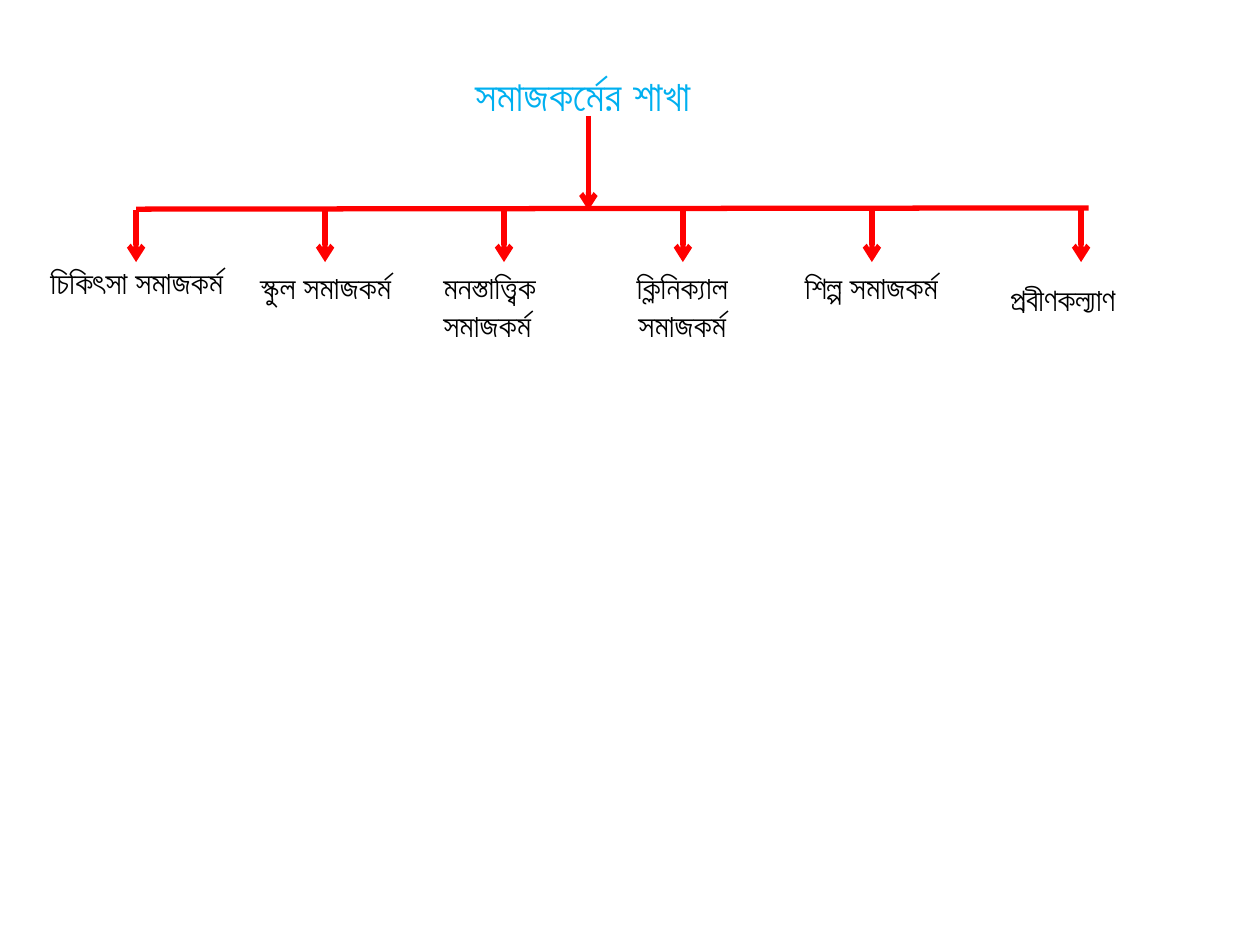
from lxml import etree
from pptx import Presentation
from pptx.dml.color import RGBColor
from pptx.enum.shapes import MSO_CONNECTOR
from pptx.enum.text import MSO_AUTO_SIZE, PP_ALIGN
from pptx.oxml.ns import qn
from pptx.util import Inches, Pt

STRAIGHT = MSO_CONNECTOR.STRAIGHT
GROW = MSO_AUTO_SIZE.SHAPE_TO_FIT_TEXT
LEFT = PP_ALIGN.LEFT
CENTER = PP_ALIGN.CENTER

RED = "FF0000"
BAR_Y = 1.67
ARROW_END = 2.08
ARROW_XS = [1.08, 2.58, 4, 5.42, 6.92, 8.58]
BRANCHES = [
    ("চিকিৎসা সমাজকর্ম", 0.2, 2.04, 1.77, 0.71, CENTER),
    ("স্কুল সমাজকর্ম", 1.92, 2.08, 1.33, 0.71, CENTER),
    ("মনস্তাত্ত্বিক সমাজকর্ম", 3.42, 2.08, 1.33, 0.71, LEFT),
    ("ক্লিনিক্যাল সমাজকর্ম", 4.75, 2.08, 1.33, 0.71, CENTER),
    ("শিল্প সমাজকর্ম", 6.25, 2.08, 1.33, 0.71, CENTER),
    ("প্রবীণকল্যাণ", 7.92, 2.17, 1.33, 0.4, LEFT),
]


def rgb(value):
    return RGBColor.from_string(value)


def add_text(s, text, x, y, w, h, size=18, color="000000", bold=False, align=CENTER):
    tf = s.shapes.add_textbox(Inches(x), Inches(y), Inches(w), Inches(h)).text_frame
    tf.word_wrap = True
    tf.auto_size = GROW
    p = tf.paragraphs[0]
    p.alignment = align
    r = p.add_run()
    r.text = text
    r.font.name = "Calibri"
    r.font.size = Pt(size)
    r.font.bold = bold
    r.font.color.rgb = rgb(color)


def add_line(s, x1, y1, x2, y2, arrow=False):
    line = s.shapes.add_connector(STRAIGHT, Inches(x1), Inches(y1), Inches(x2), Inches(y2))
    line.line.color.rgb = rgb(RED)
    line.line.width = Pt(3)
    if arrow:
        etree.SubElement(line.line._get_or_add_ln(), qn("a:tailEnd"), type="arrow")
    etree.SubElement(line._element.spPr, qn("a:effectLst"))


def main():
    prs = Presentation()
    prs.slide_width = Inches(10)
    prs.slide_height = Inches(7.5)
    s = prs.slides.add_slide(prs.slide_layouts[6])

    add_text(s, "সমাজকর্মের শাখা", 2.54, 0.5, 4.17, 0.81, size=24, color="00B0F0", bold=True)
    add_line(s, 1.08, 1.66, 8.64, 1.65)
    add_line(s, 4.67, 0.92, 4.67, BAR_Y, arrow=True)
    for x in ARROW_XS:
        add_line(s, x, BAR_Y, x, ARROW_END, arrow=True)
    for text, x, y, w, h, align in BRANCHES:
        add_text(s, text, x, y, w, h, align=align)

    prs.save("out.pptx")


if __name__ == "__main__":
    main()
